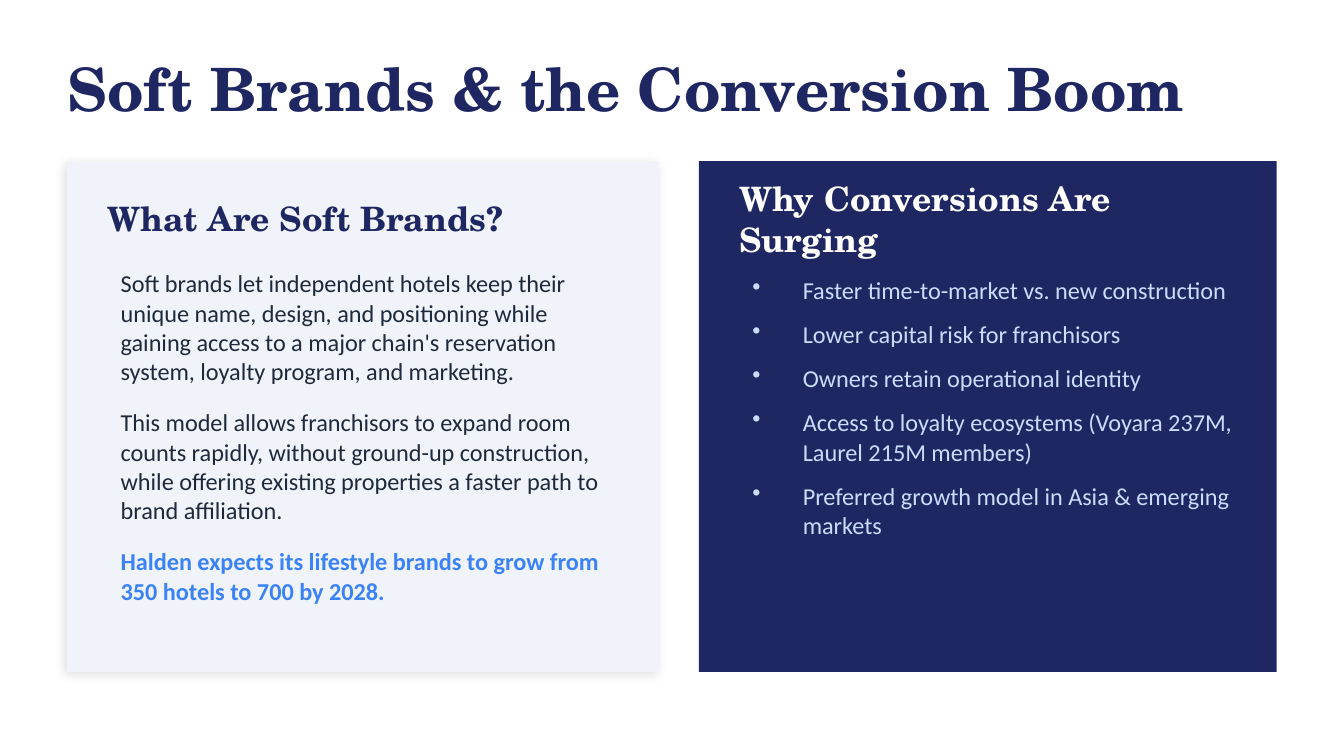
import dataclasses
import typing

import lxml.etree
import pptx
import pptx.dml.color
import pptx.enum.shapes
import pptx.enum.text
import pptx.oxml.ns
import pptx.util

RGB = pptx.dml.color.RGBColor
NAVY = RGB(0x1E, 0x27, 0x61)
PALE = RGB(0xF0, 0xF4, 0xFA)
INK = RGB(0x1E, 0x29, 0x3B)
BLUE = RGB(0x3B, 0x82, 0xF6)
ICE = RGB(0xCA, 0xDC, 0xFC)
WHITE = RGB(0xFF, 0xFF, 0xFF)

SERIF = "TeX Gyre Schola"
SANS = "Calibri"
SCALE = 4572  # EMU in one px, 200 px to the inch
INDENT = 75
ANCHOR = pptx.enum.text.MSO_ANCHOR


class Box(typing.NamedTuple):
    left: int
    top: int
    width: int
    height: int


@dataclasses.dataclass
class Line:
    text: str
    color: RGB
    bold: bool = False


@dataclasses.dataclass
class Card:
    box: Box
    fill: RGB
    head: str
    tint: RGB
    head_box: Box
    body: list[Line]
    body_box: Box
    gap: int
    bullets: bool = False
    shadow: bool = False


CARDS = [
    Card(
        Box(100, 240, 880, 760), PALE,
        "What Are Soft Brands?", NAVY, Box(160, 280, 760, 90),
        [
            Line("Soft brands let independent hotels keep their unique name, "
                 "design, and positioning while gaining access to a major "
                 "chain's reservation system, loyalty program, and marketing.", INK),
            Line("This model allows franchisors to expand room counts rapidly, "
                 "without ground-up construction, while offering existing "
                 "properties a faster path to brand affiliation.", INK),
            Line("Halden expects its lifestyle brands to grow from 350 hotels "
                 "to 700 by 2028.", BLUE, True),
        ],
        Box(160, 390, 780, 560), gap=12, shadow=True,
    ),
    Card(
        Box(1040, 240, 860, 760), NAVY,
        "Why Conversions Are Surging", WHITE, Box(1100, 280, 740, 90),
        [Line(text, ICE) for text in (
            "Faster time-to-market vs. new construction",
            "Lower capital risk for franchisors",
            "Owners retain operational identity",
            "Access to loyalty ecosystems (Voyara 237M, Laurel 215M members)",
            "Preferred growth model in Asia & emerging markets",
        )],
        Box(1100, 400, 760, 540), gap=8, bullets=True,
    ),
]


def px(count: int) -> pptx.util.Emu:
    return pptx.util.Emu(count * SCALE)


def style(target: typing.Any, values: dict[str, typing.Any]) -> None:
    for name, value in values.items():
        setattr(target, name, value)


def place(shape: typing.Any, box: Box) -> None:
    style(shape, {name: px(size) for name, size in box._asdict().items()})


def write(part: typing.Any, line: Line, face: str, size: int) -> None:
    part.text = line.text
    part.alignment = pptx.enum.text.PP_ALIGN.LEFT
    style(part.font, {"name": face, "size": pptx.util.Pt(size), "bold": line.bold})
    part.font.color.rgb = line.color


def set_head(shape: typing.Any, box: Box, line: Line, size: int) -> None:
    """Fill a heading or title that has no insets and sits mid-height."""
    place(shape, box)
    frame = shape.text_frame
    style(frame, {
        "word_wrap": True, "vertical_anchor": ANCHOR.MIDDLE,
        "auto_size": pptx.enum.text.MSO_AUTO_SIZE.NONE,
        "margin_left": 0, "margin_right": 0, "margin_top": 0, "margin_bottom": 0,
    })
    write(frame.paragraphs[0], line, face=SERIF, size=size)


def add_bullet(part: typing.Any) -> None:
    props = part._p.get_or_add_pPr()
    props.set("marL", str(px(INDENT)))
    props.set("indent", str(-px(INDENT)))
    mark = lxml.etree.SubElement(props, pptx.oxml.ns.qn("a:buChar"))
    mark.set("char", "•")


def add_shadow(shape: typing.Any) -> None:
    qn = pptx.oxml.ns.qn
    effects = shape._element.spPr.find(qn("a:effectLst"))
    outer = lxml.etree.SubElement(effects, qn("a:outerShdw"), {
        "blurRad": str(pptx.util.Pt(6)), "dist": str(pptx.util.Pt(2)),
        "dir": str(135 * 60000), "algn": "bl", "rotWithShape": "0",
    })
    color = lxml.etree.SubElement(outer, qn("a:srgbClr"), {"val": "000000"})
    lxml.etree.SubElement(color, qn("a:alpha"), {"val": "12000"})


def add_card(shapes: typing.Any, card: Card) -> None:
    kind = pptx.enum.shapes.MSO_SHAPE.RECTANGLE
    panel = shapes.add_shape(kind, *map(px, card.box))
    panel.fill.solid()
    panel.fill.fore_color.rgb = card.fill
    panel.line.fill.background()
    panel.shadow.inherit = False
    if card.shadow:
        add_shadow(panel)

    head = shapes.add_textbox(*map(px, card.head_box))
    set_head(head, card.head_box, Line(card.head, card.tint, True), 18)

    frame = shapes.add_textbox(*map(px, card.body_box)).text_frame
    style(frame, {"word_wrap": True, "vertical_anchor": ANCHOR.TOP})
    for index, line in enumerate(card.body):
        part = frame.add_paragraph() if index else frame.paragraphs[0]
        if line is not card.body[-1] or card.bullets:
            part.space_after = pptx.util.Pt(card.gap)
        if card.bullets:
            add_bullet(part)
        write(part, line, face=SANS, size=13)


def main() -> None:
    deck = pptx.Presentation()
    style(deck, {"slide_width": px(2000), "slide_height": px(1125)})
    slide = deck.slides.add_slide(deck.slide_layouts[5])
    slide.background.fill.solid()
    slide.background.fill.fore_color.rgb = WHITE
    title = Line("Soft Brands & the Conversion Boom", NAVY, True)
    set_head(slide.shapes.title, Box(100, 60, 1800, 140), title, 32)
    for card in CARDS:
        add_card(slide.shapes, card)
    deck.save("out.pptx")


if __name__ == "__main__":
    main()
